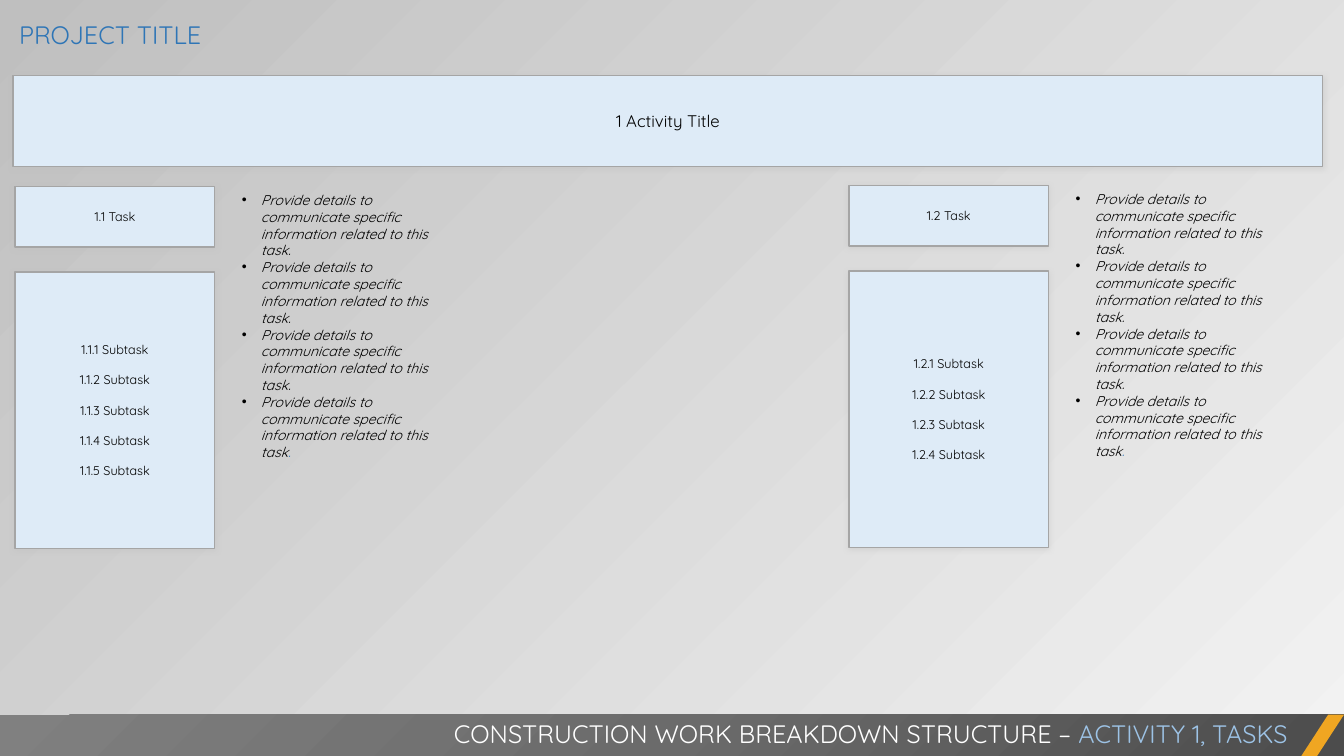
from lxml import etree
from pptx import Presentation
from pptx.dml.color import RGBColor
from pptx.enum.shapes import MSO_SHAPE
from pptx.enum.text import MSO_ANCHOR, MSO_AUTO_SIZE, PP_ALIGN
from pptx.oxml import parse_xml
from pptx.util import Inches, Pt

RECT, SLANT = MSO_SHAPE.RECTANGLE, MSO_SHAPE.PARALLELOGRAM
LEFT, MID, RIGHT = PP_ALIGN.LEFT, PP_ALIGN.CENTER, PP_ALIGN.RIGHT
FONT = "Quicksand"
NS = "http://schemas.openxmlformats.org/drawingml/2006/main"

BLACK = RGBColor(0x00, 0x00, 0x00)
WHITE = RGBColor(0xFF, 0xFF, 0xFF)
BLUE = RGBColor(0x2E, 0x75, 0xB6)
SKY = RGBColor(0x9D, 0xC3, 0xE6)
PALE = RGBColor(0xDE, 0xEB, 0xF7)
GREY = RGBColor(0xA5, 0xA5, 0xA5)
LIGHT = RGBColor(0xF2, 0xF2, 0xF2)
SILVER = RGBColor(0xBF, 0xBF, 0xBF)
GOLD = RGBColor(0xF0, 0xA6, 0x22)
BAR = [(0, RGBColor(0x4C, 0x4C, 0x4C)), (50, RGBColor(0x6B, 0x6B, 0x6B)),
       (100, RGBColor(0x80, 0x80, 0x80))]

# Content
TITLE = "PROJECT TITLE"
ACTIVITY = "1 Activity Title"
FOOTER = [("CONSTRUCTION WORK BREAKDOWN STRUCTURE – ", WHITE),
          ("ACTIVITY 1, TASKS", SKY)]
DETAIL = "Provide details to communicate specific information related to this task"
NOTES = [[(DETAIL + ".", BLACK)]] * 3 + [[(DETAIL, BLACK), (".", BLUE)]]
# Task number, subtask count, left and top of the column, left of its notes
TASKS = [("1.1", 5, 0.15, 1.85, 2.3), ("1.2", 4, 8.42, 1.84, 10.57)]

# Sizes in inches
WIDE, HIGH = 13.33, 7.5
BOX_W, TASK_H, SUB_H, STEP = 1.98, 0.6, 2.74, 0.85
BAR_TOP, BAR_H, TIP_W = 7.09, 0.42, 0.43

prs = Presentation()
prs.slide_width, prs.slide_height = Inches(WIDE), Inches(HIGH)
slide = prs.slides.add_slide(prs.slide_layouts[6])


def write(frame, paras, size, align, gap=0, bullet=False):
    """Fill a text frame with paragraphs, each a list of (text, colour)."""
    frame.word_wrap = True
    for i, runs in enumerate(paras):
        para = frame.add_paragraph() if i else frame.paragraphs[0]
        para.alignment = align
        if i and gap:
            para.space_before = Pt(gap)
        for text, color in runs:
            run = para.add_run()
            run.text = text
            run.font.size, run.font.name = Pt(size), FONT
            run.font.color.rgb = color
            if bullet:
                run.font.italic = True
        if bullet:
            props = para._p.get_or_add_pPr()
            props.set("marL", str(Inches(0.19)))
            props.set("indent", str(-Inches(0.19)))
            face = etree.SubElement(props, f"{{{NS}}}buFont")
            face.set("typeface", "Arial")
            etree.SubElement(props, f"{{{NS}}}buChar").set("char", "•")


def label(x, y, w, h, paras, size, align, bullet=False):
    box = slide.shapes.add_textbox(*map(Inches, (x, y, w, h)))
    box.text_frame.auto_size = MSO_AUTO_SIZE.SHAPE_TO_FIT_TEXT
    write(box.text_frame, paras, size, align, bullet=bullet)


def block(kind, x, y, w, h, fill):
    shape = slide.shapes.add_shape(kind, *map(Inches, (x, y, w, h)))
    shape.shadow.inherit = False
    shape.fill.solid()
    shape.fill.fore_color.rgb = fill
    shape.line.fill.background()
    return shape


def card(x, y, w, h, lines, size):
    """Pale box with a thin line, a soft shadow and centred lines."""
    shape = block(RECT, x, y, w, h, PALE)
    shape.line.color.rgb = GREY
    shape.line.width = Pt(1)
    effects = shape._element.spPr.find(f"{{{NS}}}effectLst")
    effects.append(parse_xml(
        f'<a:outerShdw xmlns:a="{NS}" blurRad="{Pt(4)}" dist="{Pt(1)}" '
        f'dir="5400000" rotWithShape="0"><a:srgbClr val="{SILVER}">'
        '<a:alpha val="40000"/></a:srgbClr></a:outerShdw>'))
    shape.text_frame.vertical_anchor = MSO_ANCHOR.MIDDLE
    write(shape.text_frame, [[(line, BLACK)] for line in lines],
          size, MID, gap=size * 1.2)


# Background
back = slide.background.fill
back.gradient()
back.gradient_angle = 135
for stop, color in zip(back.gradient_stops, (LIGHT, SILVER)):
    stop.color.rgb = color

# Activity
card(0.13, 0.75, 12.99, 0.9, [ACTIVITY], 12)

# Footer bar with its slanted tip
bar = block(RECT, 0, BAR_TOP, WIDE, BAR_H, BAR[0][1])
stops = "".join(f'<a:gs pos="{pos * 1000}"><a:srgbClr val="{color}"/></a:gs>'
                for pos, color in BAR)
props = bar._element.spPr
props.replace(props.find(f"{{{NS}}}solidFill"), parse_xml(
    f'<a:gradFill xmlns:a="{NS}" rotWithShape="1"><a:gsLst>{stops}</a:gsLst>'
    '<a:path path="circle"><a:fillToRect l="100000" t="100000"/></a:path>'
    '</a:gradFill>'))
tip = block(SLANT, WIDE - TIP_W, BAR_TOP, TIP_W, BAR_H, GOLD)
tip.adjustments[0] = 0.65
label(0, 7.08, 12.87, 0.4, [FOOTER], 18, RIGHT)

# Title
label(0.09, 0.14, 10.11, 0.4, [[(TITLE, BLUE)]], 18, LEFT)

# Task columns
for num, count, x, y, note_x in TASKS:
    card(x, y, BOX_W, TASK_H, [f"{num} Task"], 9)
    subs = [f"{num}.{i + 1} Subtask" for i in range(count)]
    card(x, y + STEP, BOX_W, SUB_H, subs, 9)
    label(note_x, y, 2.06, 3, NOTES, 10, LEFT, bullet=True)

prs.save("out.pptx")
